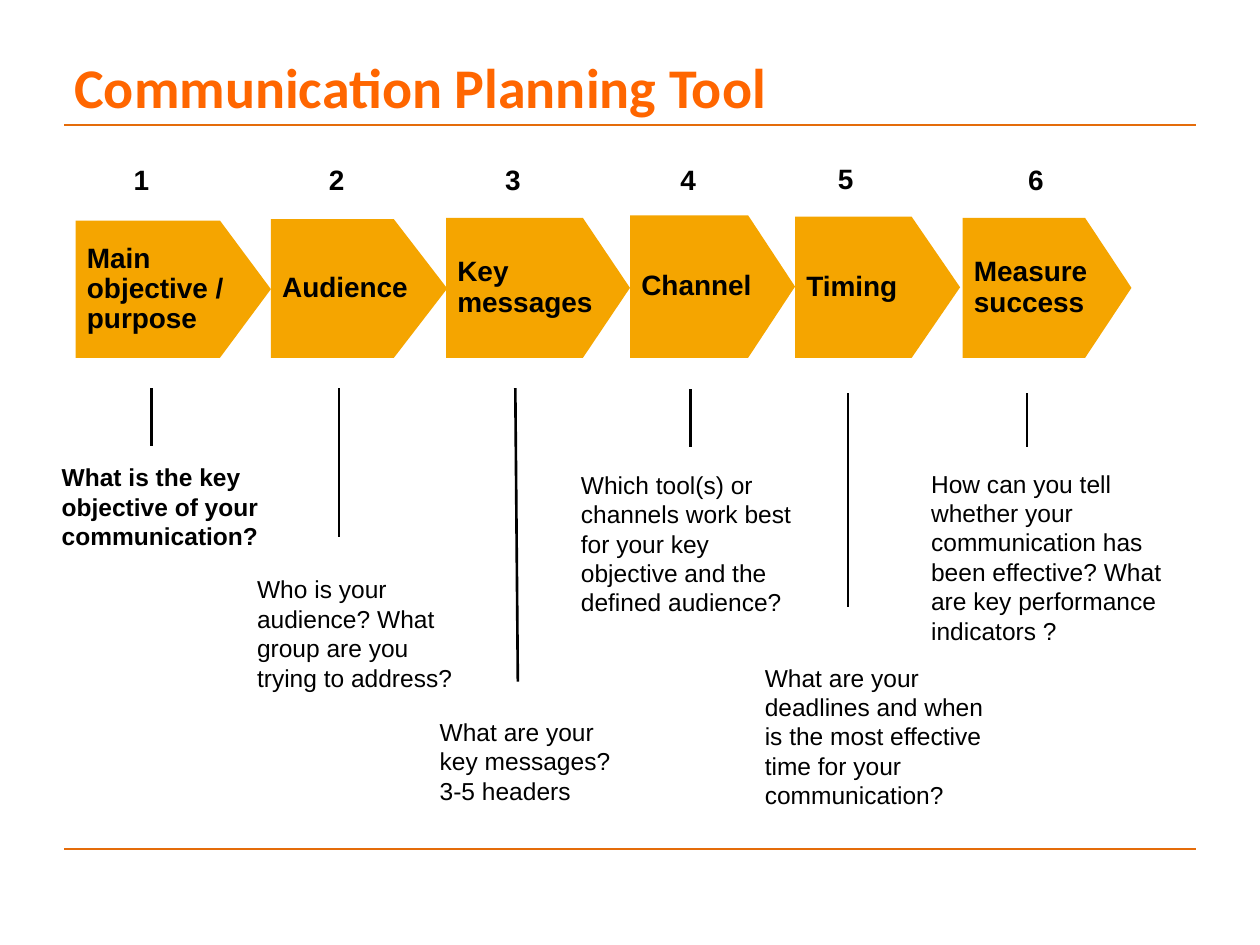
from lxml import etree
from pptx import Presentation
from pptx import util as u
from pptx.dml.color import RGBColor
from pptx.enum import shapes, text
from pptx.oxml.ns import qn

TITLE = "Communication Planning Tool"
ORANGE, AMBER, BLACK = "E46C0A", "F5A500", "000000"
RULES = (0.99, 6.74)
BASE = 2.84  # shared bottom edge of the arrows

# arrow: name, left, top, width, point depth
# number: left, top; stem: x, top, end x, bottom; question: left, top, width, height
STEPS = [
    dict(arrow=("Main objective / purpose", 0.6, 1.75, 1.55, 0.371),
         num=(0.97, 1.24), stem=(1.2, 3.08, 1.2, 3.54),
         ask=("What is the key objective of your communication?",
              0.4, 3.62, 1.76, 0.8)),
    dict(arrow=("Audience", 2.15, 1.74, 1.4, 0.385),
         num=(2.52, 1.24), stem=(2.69, 3.08, 2.69, 4.26),
         ask=("Who is your audience? What group are you trying to address?",
              1.95, 4.51, 1.81, 1.04)),
    dict(arrow=("Key messages", 3.54, 1.73, 1.46, 0.336),
         num=(3.92, 1.24), stem=(4.09, 3.08, 4.11, 5.41),
         ask=("What are your key messages? 3-5 headers",
              3.4, 5.64, 1.7, 0.8)),
    dict(arrow=("Channel", 5, 1.71, 1.31, 0.329),
         num=(5.31, 1.24), stem=(5.48, 3.09, 5.48, 3.55),
         ask=("Which tool(s) or channels work best for your key objective "
              "and the defined audience?", 4.52, 3.68, 1.89, 1.27)),
    dict(arrow=("Timing", 6.31, 1.72, 1.31, 0.343),
         num=(6.56, 1.23), stem=(6.73, 3.12, 6.73, 4.82),
         ask=("What are your deadlines and when is the most effective time "
              "for your communication?", 5.98, 5.21, 1.96, 1.27)),
    dict(arrow=("Measure success", 7.64, 1.73, 1.34, 0.331),
         num=(8.07, 1.24), stem=(8.15, 3.12, 8.15, 3.55),
         ask=("How can you tell whether your communication has been "
              "effective? What are key performance indicators ?",
              7.3, 3.67, 2.3, 1.51)),
]


def color(code):
    return RGBColor.from_string(code)


def inches(*nums):
    return [u.Inches(n) for n in nums]


def write(shape, words, size, bold=False, tint=BLACK, face="Arial",
          middle=False, wrap=True, lead=None):
    frame = shape.text_frame
    frame.text = words
    frame.word_wrap = wrap
    frame.vertical_anchor = (text.MSO_ANCHOR.MIDDLE if middle
                             else text.MSO_ANCHOR.TOP)
    frame.margin_left = frame.margin_right = u.Inches(0.09)
    frame.margin_top = frame.margin_bottom = u.Inches(0.05)
    para = frame.paragraphs[0]
    para.alignment = text.PP_ALIGN.LEFT
    if lead:
        para.line_spacing = lead
    font = para.runs[0].font
    font.name, font.size, font.bold = face, u.Pt(size), bold
    font.color.rgb = color(tint)


def label(slide, box, words, size, **style):
    write(slide.shapes.add_textbox(*inches(*box)), words, size, **style)


def rule(slide, ends, tint, width):
    line = slide.shapes.add_connector(
        shapes.MSO_CONNECTOR.STRAIGHT, *inches(*ends))
    line.line.color.rgb = color(tint)
    line.line.width = u.Pt(width)
    etree.SubElement(line._element.spPr, qn("a:effectLst"))


def arrow(slide, name, left, top, width, depth):
    shape = slide.shapes.add_shape(
        shapes.MSO_SHAPE.PENTAGON, *inches(left, top, width, BASE - top))
    shape.adjustments[0] = depth
    shape.shadow.inherit = False
    shape.fill.solid()
    shape.fill.fore_color.rgb = color(AMBER)
    shape.line.fill.background()
    write(shape, name, 16, bold=True, middle=True, lead=0.9)


def main():
    deck = Presentation()
    deck.slide_width, deck.slide_height = inches(10, 7.5)
    slide = deck.slides.add_slide(deck.slide_layouts[6])

    for y in RULES:
        rule(slide, (0.51, y, 9.49, y), ORANGE, 1.25)
    label(slide, (0.5, 0.3, 9, 0.77), TITLE, 32, bold=True,
          tint="FF6600", face="Calibri", middle=True)

    for i, step in enumerate(STEPS):
        arrow(slide, *step["arrow"])
        label(slide, (*step["num"], 0.33, 0.37), str(i + 1), 16,
              bold=True, wrap=False)
        rule(slide, step["stem"], BLACK, 1.5)
        words, *box = step["ask"]
        label(slide, box, words, 14, bold=i == 0)

    deck.save("out.pptx")


if __name__ == "__main__":
    main()
